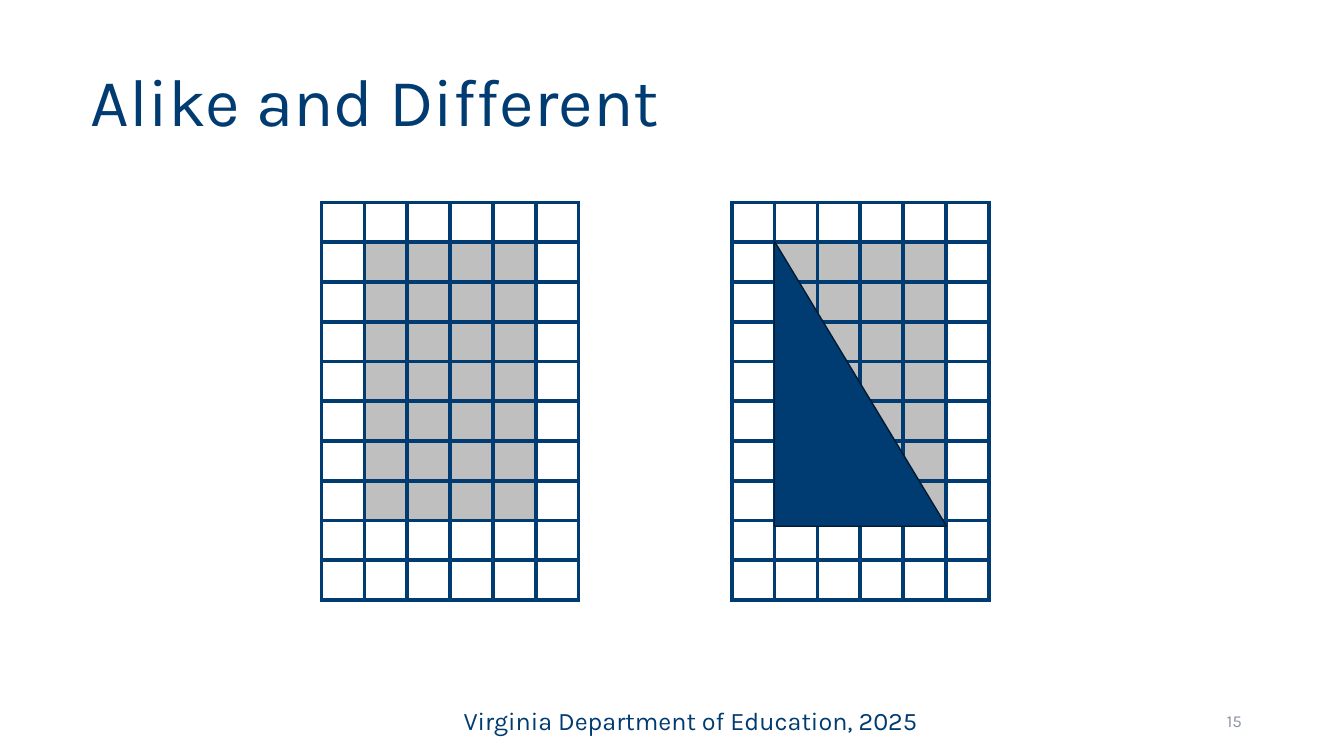
from dataclasses import dataclass

from lxml import etree
from pptx import Presentation
from pptx.dml.color import RGBColor
from pptx.enum import shapes, text
from pptx.oxml import ns
from pptx.util import Pt

# Content
TITLE = "Alike and Different"
FOOTER = "Virginia Department of Education, 2025"
PAGE = "15"
GRID_LEFTS = (229.7, 522.7)
GRID_TOP = 144.7
ROWS, COLS = 10, 6
SHADED_ROWS, SHADED_COLS = range(1, 8), range(1, 5)
CELL_W, CELL_H = 30.6, 28.4
TRIANGLE = (553, 172.1, 123.1, 203.8)


@dataclass(frozen=True)
class Theme:
    font: str = "Karla"
    navy: str = "003C71"
    outline: str = "001A32"
    shade: str = "BFBFBF"
    muted: str = "8C92A5"
    title: int = 48
    footer: int = 18
    page: int = 12
    border: int = 3


T = Theme()


def rgb(value):
    return RGBColor.from_string(value)


def put_text(sp, words, *, size, color, box, align=text.PP_ALIGN.LEFT,
             anchor=text.MSO_ANCHOR.TOP, left_inset=7.2, spacing=1.0):
    sp.left, sp.top, sp.width, sp.height = map(Pt, box)
    tf = sp.text_frame
    tf.word_wrap = True
    tf.auto_size = text.MSO_AUTO_SIZE.NONE
    tf.vertical_anchor = anchor
    tf.margin_left, tf.margin_right = Pt(left_inset), Pt(7.2)
    tf.margin_top = tf.margin_bottom = Pt(3.6)
    p = tf.paragraphs[0]
    p.alignment, p.line_spacing = align, spacing
    r = p.add_run()
    r.text = words
    r.font.name, r.font.size = T.font, Pt(size)
    r.font.color.rgb = rgb(color)


def set_borders(cell):
    tc_pr = cell._tc.get_or_add_tcPr()
    for i, side in enumerate(("lnL", "lnR", "lnT", "lnB")):
        ln = etree.Element(ns.qn(f"a:{side}"), w=str(Pt(T.border)))
        fill = etree.SubElement(ln, ns.qn("a:solidFill"))
        etree.SubElement(fill, ns.qn("a:srgbClr"), val=T.navy)
        tc_pr.insert(i, ln)


def add_grid(s, left):
    frame = s.shapes.add_table(ROWS, COLS, Pt(left), Pt(GRID_TOP),
                               Pt(COLS * CELL_W), Pt(ROWS * CELL_H))
    table = frame.table
    table.first_row = table.horz_banding = False
    for column in table.columns:
        column.width = Pt(CELL_W)
    for i, row in enumerate(table.rows):
        row.height = Pt(CELL_H)
        for j, cell in enumerate(row.cells):
            cell.margin_top = cell.margin_bottom = 0
            if i in SHADED_ROWS and j in SHADED_COLS:
                cell.fill.solid()
                cell.fill.fore_color.rgb = rgb(T.shade)
            else:
                cell.fill.background()
            set_borders(cell)


def main():
    prs = Presentation()
    prs.slide_width, prs.slide_height = Pt(960), Pt(540)
    s = prs.slides.add_slide(prs.slide_layouts[5])

    # Title, footer and page number
    put_text(s.shapes.title, TITLE, size=T.title, color=T.navy,
             box=(0, 0, 960, 104.4), anchor=text.MSO_ANCHOR.BOTTOM,
             left_inset=64.8, spacing=0.9)
    put_text(s.shapes.add_textbox(0, 0, 0, 0), FOOTER, size=T.footer,
             color=T.navy, box=(324, 500.4, 480, 28.8))
    put_text(s.shapes.add_textbox(0, 0, 0, 0), PAGE, size=T.page,
             color=T.muted, box=(678.2, 500.4, 216, 28.8),
             align=text.PP_ALIGN.RIGHT, anchor=text.MSO_ANCHOR.MIDDLE)

    # Grids with a shaded rectangle
    for left in GRID_LEFTS:
        add_grid(s, left)

    # Triangle over the second grid
    sp = s.shapes.add_shape(shapes.MSO_SHAPE.RIGHT_TRIANGLE, *map(Pt, TRIANGLE))
    sp.shadow.inherit = False
    sp.fill.solid()
    sp.fill.fore_color.rgb = rgb(T.navy)
    sp.line.color.rgb = rgb(T.outline)
    sp.line.width = Pt(1)

    prs.save("out.pptx")


if __name__ == "__main__":
    main()
